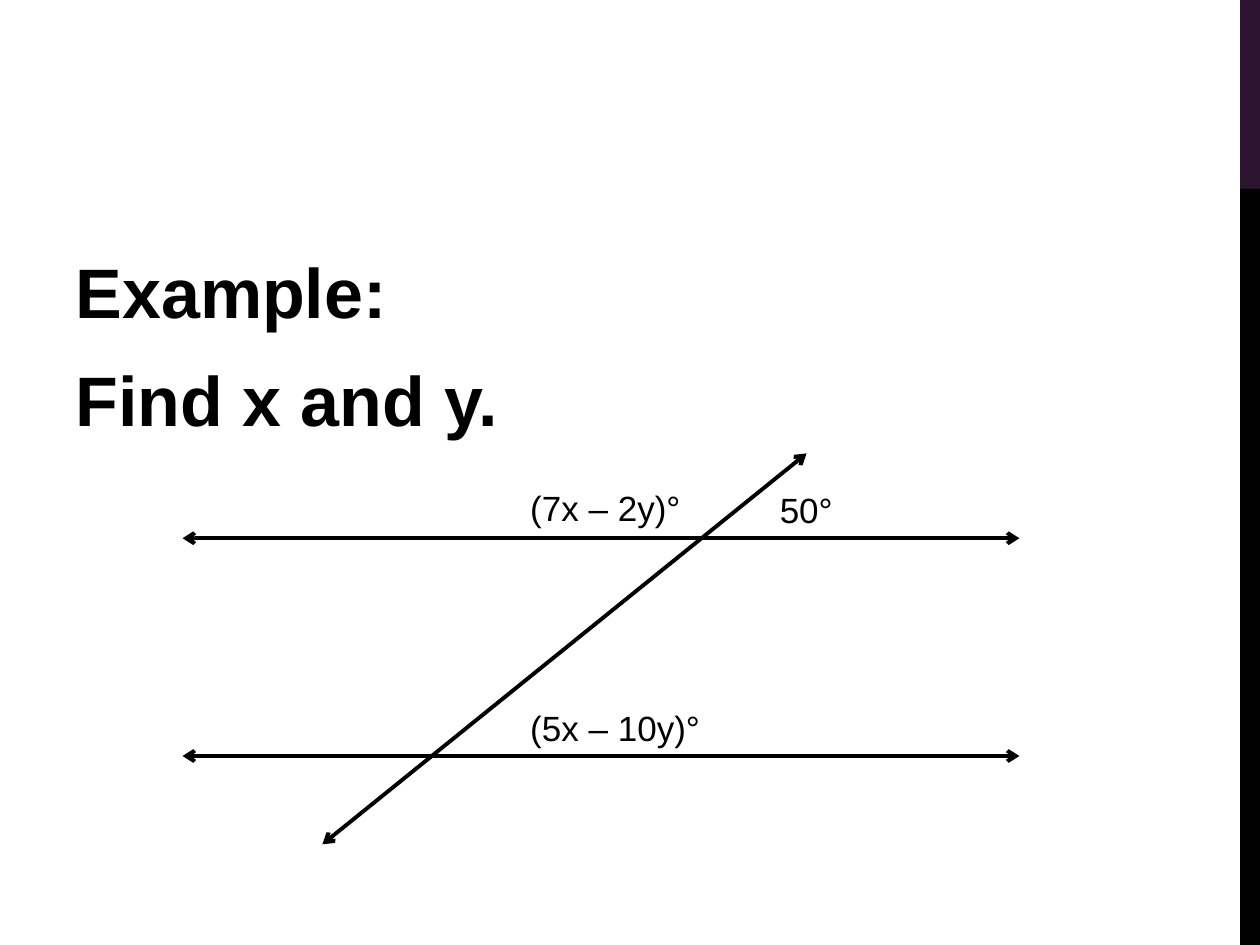
from pptx import Presentation
from pptx.dml.color import RGBColor as Rgb
from pptx.enum.shapes import MSO_CONNECTOR as Link, MSO_SHAPE as Kind
from pptx.enum.text import MSO_AUTO_SIZE as Fit
from pptx.oxml.ns import qn
from pptx.util import Cm, Pt
from lxml.etree import SubElement as Sub

# Content: lengths in cm
HEADS = ["Example:", "Find x and y."]
BODY = (1.27, 4.88, 21.16, 12.14)
BARS = [("plum", 0, 3.81), ("ink", 3.81, 15.24)]  # colour, top, height
EDGE, WIDE = 25, 0.4
LEFT, RIGHT = 3.68, 20.55
UPPER, LOWER = 10.85, 15.24
CROSS = (6.5, 17.02, 16.26, 9.14)
ANGLES = [
    ("(7x – 2y)°", 10.44, 9.68, 3.58),
    ("50°", 15.47, 9.73, 1.6),
    ("(5x – 10y)°", 10.44, 14.12, 3.96),
]
TALL = 1.12

THEME = {
    "font": "Arial", "ink": Rgb(0, 0, 0), "plum": Rgb(0x2B, 0x14, 0x2D),
    "head": Pt(40), "label": Pt(20), "line": Pt(2.25), "gap": Pt(6),
}


def write(frame, lines, size, bold=False, after=None):
    for i, text in enumerate(lines):
        para = frame.paragraphs[0] if i == 0 else frame.add_paragraph()
        para.space_after = after
        run = para.add_run()
        run.text = text
        font = run.font
        font.name, font.size, font.bold = THEME["font"], size, bold
        font.color.rgb = THEME["ink"]
    return frame.paragraphs


def arrow(slide, ends):
    line = slide.shapes.add_connector(Link.STRAIGHT, *map(Cm, ends))
    line.line.color.rgb = THEME["ink"]
    line.line.width = THEME["line"]
    stroke = line.line._get_or_add_ln()
    for tag in ("a:headEnd", "a:tailEnd"):
        Sub(stroke, qn(tag), type="arrow")
    Sub(line._element.spPr, qn("a:effectLst"))


def main():
    deck = Presentation()
    deck.slide_width, deck.slide_height = Cm(25.4), Cm(19.05)
    slide = deck.slides.add_slide(deck.slide_layouts[1])
    title = slide.shapes.title._element
    title.getparent().remove(title)

    # Side bars
    for tint, top, tall in BARS:
        bar = slide.shapes.add_shape(
            Kind.RECTANGLE, Cm(EDGE), Cm(top), Cm(WIDE), Cm(tall))
        bar.shadow.inherit = False
        bar.fill.solid()
        bar.fill.fore_color.rgb = THEME[tint]
        bar.line.fill.background()

    # Heading lines, without bullets
    body = slide.placeholders[1]
    body.left, body.top, body.width, body.height = map(Cm, BODY)
    body.text_frame.auto_size = Fit.NONE
    for para in write(body.text_frame, HEADS, THEME["head"],
                      bold=True, after=THEME["gap"]):
        props = para._p.get_or_add_pPr()
        props.set("marL", "0")
        props.set("indent", "0")
        Sub(props, qn("a:buNone"))

    # Two parallel lines and the transversal
    for y in (UPPER, LOWER):
        arrow(slide, (LEFT, y, RIGHT, y))
    arrow(slide, CROSS)

    # Angle labels
    for text, x, y, wide in ANGLES:
        box = slide.shapes.add_textbox(Cm(x), Cm(y), Cm(wide), Cm(TALL))
        box.text_frame.word_wrap = False
        box.text_frame.auto_size = Fit.SHAPE_TO_FIT_TEXT
        write(box.text_frame, [text], THEME["label"])

    deck.save("out.pptx")


if __name__ == "__main__":
    main()
